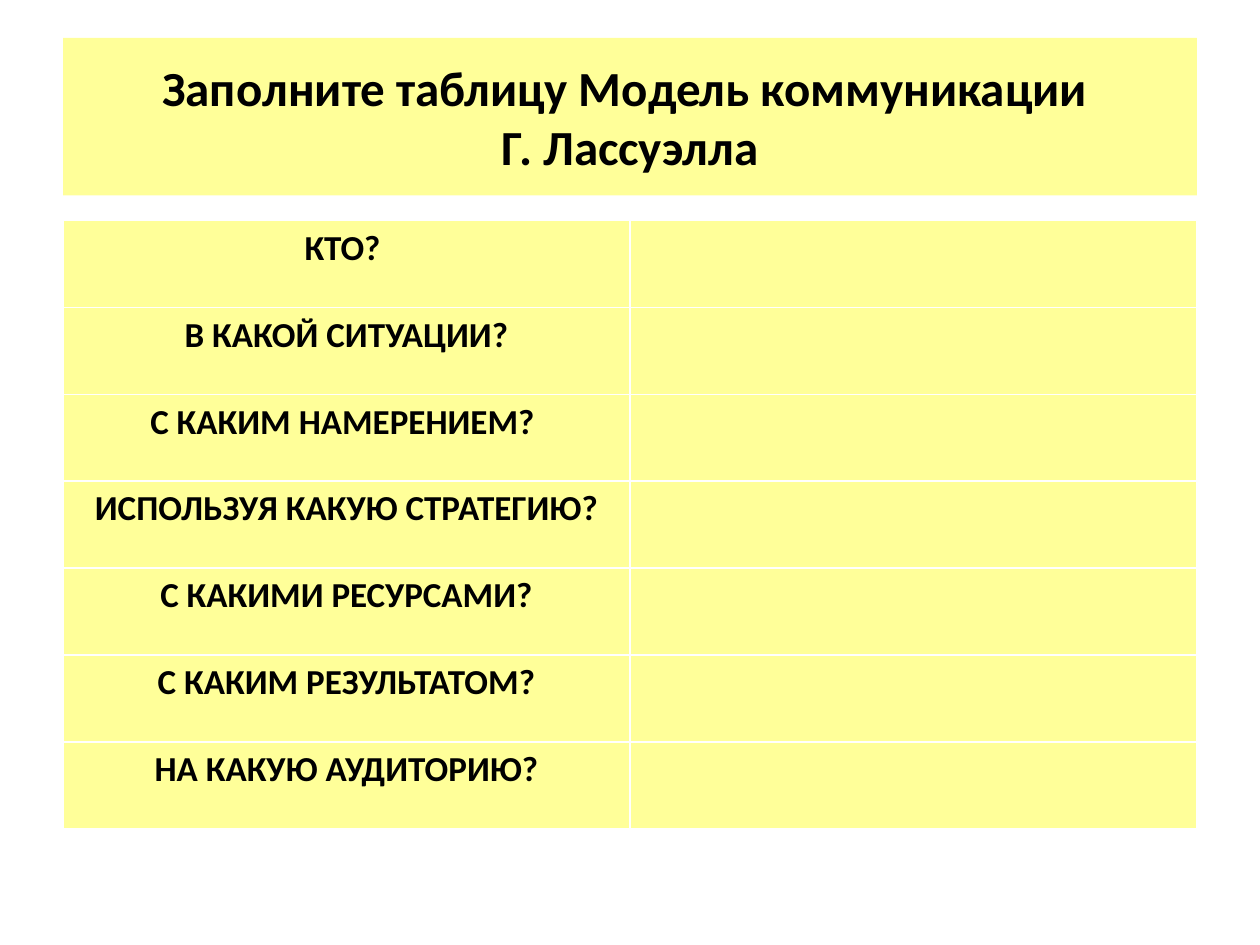
from pptx import Presentation
from pptx.dml.color import RGBColor
from pptx.enum.text import MSO_ANCHOR, PP_ALIGN
from pptx.util import Pt

YELLOW = RGBColor(0xFF, 0xFF, 0x99)
BLACK = RGBColor(0x00, 0x00, 0x00)

LEFT, WIDTH = Pt(36), Pt(648)
ROW_HEIGHT = Pt(49.68)
QUESTIONS = [
    "КТО? ",
    "В КАКОЙ СИТУАЦИИ?",
    "С КАКИМ НАМЕРЕНИЕМ? ",
    "ИСПОЛЬЗУЯ КАКУЮ СТРАТЕГИЮ?",
    "С КАКИМИ РЕСУРСАМИ?",
    "С КАКИМ РЕЗУЛЬТАТОМ?",
    "НА КАКУЮ АУДИТОРИЮ?",
]


def write_lines(frame, *lines, size, font="Calibri", color=BLACK, bold=True,
                align=PP_ALIGN.CENTER):
    """Write one paragraph whose lines are separated by line breaks."""
    paragraph = frame.paragraphs[0]
    paragraph.alignment = align
    for index, line in enumerate(lines):
        if index:
            paragraph.add_line_break()
        run = paragraph.add_run()
        run.text = line
        run.font.name = font
        run.font.size = Pt(size)
        run.font.bold = bold
        run.font.color.rgb = color


presentation = Presentation()
presentation.slide_width = Pt(720)
presentation.slide_height = Pt(540)
slide = presentation.slides.add_slide(presentation.slide_layouts[5])

heading = slide.shapes.title
heading.left, heading.top = LEFT, Pt(21.6)
heading.width, heading.height = WIDTH, Pt(90)
heading.fill.solid()
heading.fill.fore_color.rgb = YELLOW
heading.text_frame.vertical_anchor = MSO_ANCHOR.MIDDLE
write_lines(heading.text_frame, "Заполните таблицу Модель коммуникации ",
            "Г. Лассуэлла", size=28)

# The default table style supplies the white rules and the thicker header rule.
model = slide.shapes.add_table(len(QUESTIONS), 2, LEFT, Pt(126), WIDTH,
                               ROW_HEIGHT * len(QUESTIONS)).table
for row, question in zip(model.rows, QUESTIONS):
    row.height = ROW_HEIGHT
    for cell in row.cells:
        cell.fill.solid()
        cell.fill.fore_color.rgb = YELLOW
    write_lines(row.cells[0].text_frame, question, size=20)

presentation.save("out.pptx")
